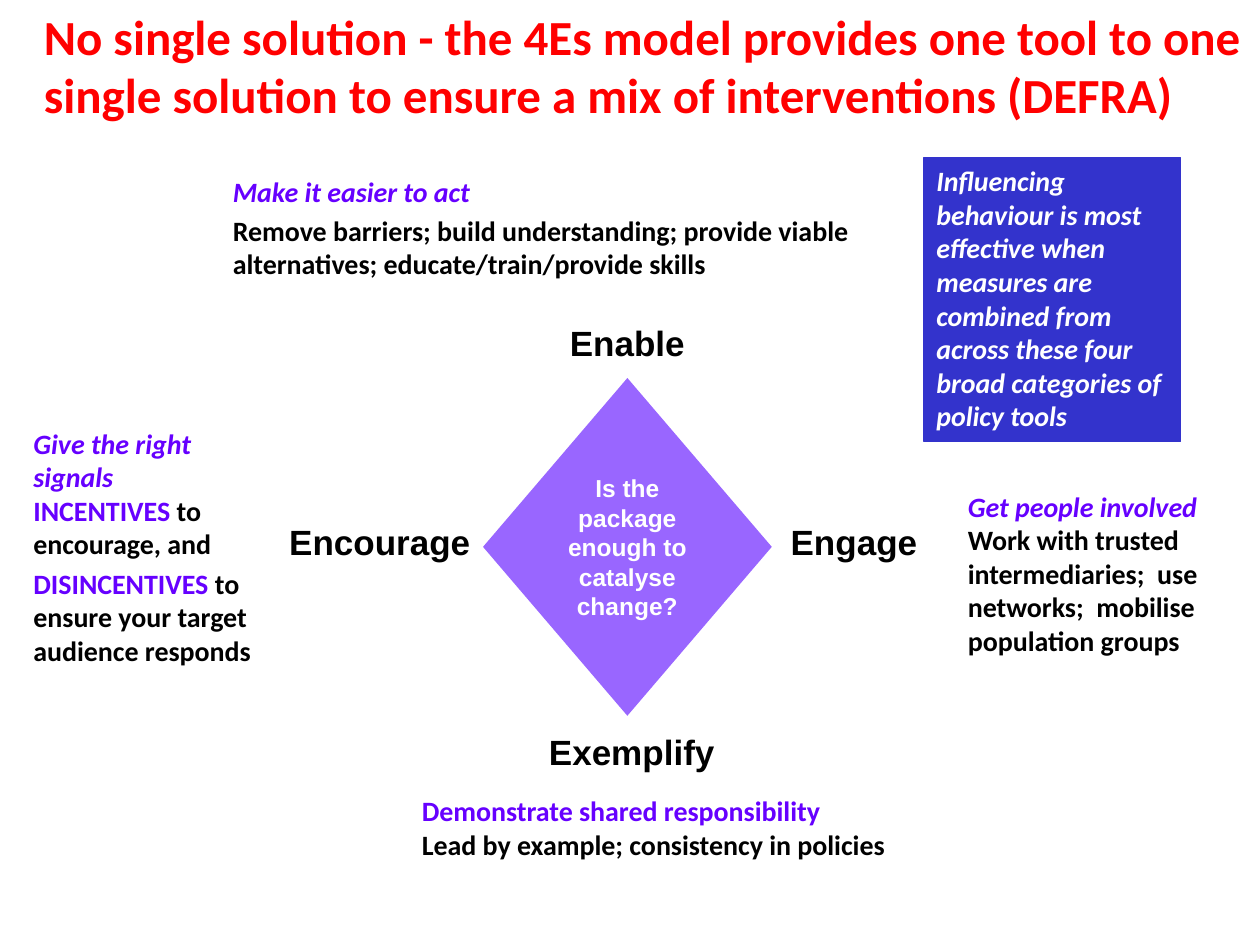
from pptx import Presentation
from pptx.dml.color import RGBColor
from pptx.enum.shapes import MSO_SHAPE
from pptx.enum.text import MSO_ANCHOR, PP_ALIGN
from pptx.util import Pt

COLORS = {
    "title": "FF0000", "accent": "6600FF", "text": "000000",
    "light": "FFFFFF", "diamond": "9966FF", "callout": "3333CC",
}

# Content: boxes are left, top, width, height in points
TITLE = ("No single solution - the 4Es model provides one tool to one "
         "single solution to ensure a mix of interventions (DEFRA)")
TITLE_BOX = (18, 0, 702, 75)
QUESTION = "Is the package enough to catalyse change?"
DIAMOND_BOX = (276, 216, 165, 193)
CALLOUT = ("Influencing behaviour is most effective when measures are combined "
           "from across these four broad categories of policy tools")
CALLOUT_BOX = (528, 90, 146.5, 162.5)

LABELS = [
    ("Enable", (318, 180, 81, 31.5)),
    ("Encourage", (150, 294, 134, 31.5)),
    ("Engage", (444, 294, 88, 31.5)),
    ("Exemplify", (306, 414, 110, 31.5)),
]

# Each paragraph is a list of (text, color, italic) runs; "\n" is a line break
DETAILS = [
    ((126, 96, 416, 69), [
        [("Make it easier to act", "accent", True)],
        [("Remove barriers; build understanding; provide viable alternatives; "
          "educate/train/provide skills", "text", False)],
    ]),
    ((546, 276, 163.5, 104.5), [
        [("Get people involved\n", "accent", True),
         ("Work with trusted intermediaries;  use networks;  mobilise "
          "population groups", "text", False)],
    ]),
    ((234, 450, 388, 69), [
        [("Demonstrate shared responsibility\n", "accent", False),
         ("Lead by example; consistency in policies", "text", False)],
    ]),
    ((12, 240, 146, 147), [
        [("Give the right signals\n", "accent", True),
         ("INCENTIVES ", "accent", False),
         ("to encourage, and", "text", False)],
        [("DISINCENTIVES", "accent", False),
         (" to ensure your target audience responds", "text", False)],
    ]),
]


def color(name):
    return RGBColor.from_string(COLORS[name])


def style(paragraph, size, font_name, color_name=None, italic=None):
    font = paragraph.font
    font.size, font.name, font.bold, font.italic = Pt(size), font_name, True, italic
    if color_name:
        font.color.rgb = color(color_name)


def add_text_box(slide, box, wrap=True):
    frame = slide.shapes.add_textbox(*map(Pt, box)).text_frame
    frame.word_wrap = wrap
    return frame


def add_filled_shape(slide, kind, box, fill, text):
    shape = slide.shapes.add_shape(kind, *map(Pt, box))
    shape.shadow.inherit = False
    shape.fill.solid()
    shape.fill.fore_color.rgb = color(fill)
    shape.line.fill.background()
    shape.text_frame.word_wrap = True
    shape.text_frame.text = text
    return shape


def add_details(slide, box, paragraphs):
    frame = add_text_box(slide, box)
    for index, runs in enumerate(paragraphs):
        paragraph = frame.add_paragraph() if index else frame.paragraphs[0]
        style(paragraph, 16, "Calibri")
        if index:
            paragraph.space_before = Pt(3.2)
        for text, color_name, italic in runs:
            run = paragraph.add_run()
            run.text = text.rstrip("\n")
            run.font.color.rgb = color(color_name)
            run.font.italic = italic
            if text.endswith("\n"):
                paragraph.add_line_break()


def main():
    presentation = Presentation()
    presentation.slide_width, presentation.slide_height = Pt(720), Pt(540)
    slide = presentation.slides.add_slide(presentation.slide_layouts[6])

    # Central question
    diamond = add_filled_shape(slide, MSO_SHAPE.DIAMOND, DIAMOND_BOX, "diamond", QUESTION)
    diamond.text_frame.vertical_anchor = MSO_ANCHOR.MIDDLE
    paragraph = diamond.text_frame.paragraphs[0]
    paragraph.alignment = PP_ALIGN.CENTER
    style(paragraph, 14, "Arial", "light")

    # The four Es
    for text, box in LABELS:
        frame = add_text_box(slide, box, wrap=False)
        frame.text = text
        frame.paragraphs[0].alignment = PP_ALIGN.CENTER
        style(frame.paragraphs[0], 20, "Arial", "text")

    # Explanation beside each E
    for box, paragraphs in DETAILS:
        add_details(slide, box, paragraphs)

    # Callout
    callout = add_filled_shape(slide, MSO_SHAPE.RECTANGLE, CALLOUT_BOX, "callout", CALLOUT)
    callout.line.color.rgb = color("callout")
    callout.line.width = Pt(0.75)
    callout.text_frame.vertical_anchor = MSO_ANCHOR.TOP
    paragraph = callout.text_frame.paragraphs[0]
    paragraph.alignment = PP_ALIGN.LEFT
    style(paragraph, 16, "Calibri", "light", italic=True)

    # Title
    frame = add_text_box(slide, TITLE_BOX)
    frame.text = TITLE
    style(frame.paragraphs[0], 28, "Calibri", "title")

    presentation.save("out.pptx")


if __name__ == "__main__":
    main()
